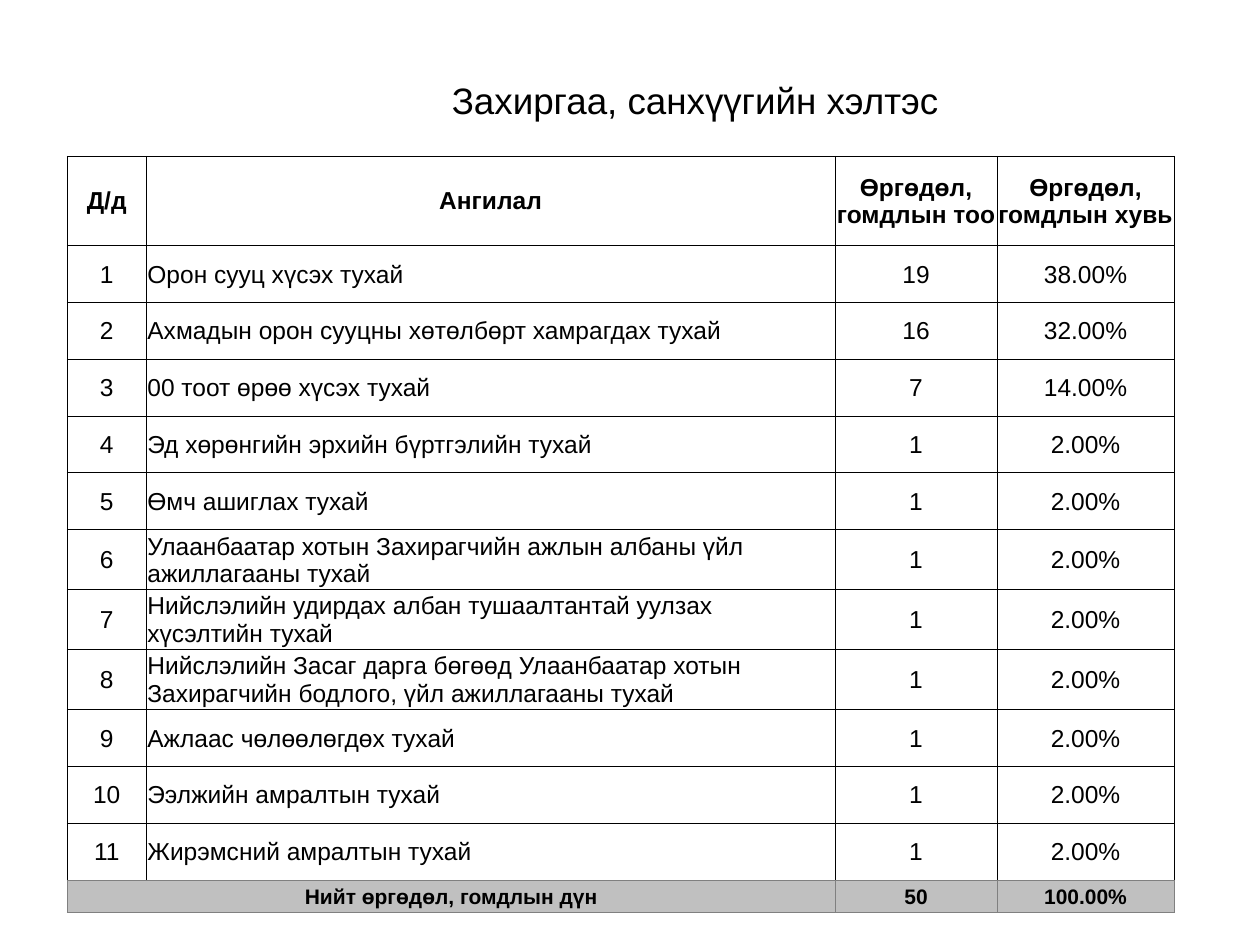
import dataclasses

import pptx
import pptx.dml.color
import pptx.enum.text
import pptx.oxml
import pptx.oxml.ns
import pptx.util

Pt = pptx.util.Pt
Align = pptx.enum.text.PP_ALIGN
Anchor = pptx.enum.text.MSO_ANCHOR


@dataclasses.dataclass(frozen=True)
class Theme:
    font: str = "Arial"
    ink: str = "000000"
    paper: str = "FFFFFF"
    grey: str = "C0C0C0"
    edge: str = "808080"
    title: float = 21
    body: float = 14
    total: float = 12
    line: float = 0.5


THEME = Theme()
COLS = [45, 393.75, 92.5, 101.25]
HEAD = ["Д/д", "Ангилал", "Өргөдөл, гомдлын тоо", "Өргөдөл, гомдлын хувь"]
ITEMS = [
    ("Орон сууц хүсэх тухай", 19),
    ("Ахмадын орон сууцны хөтөлбөрт хамрагдах тухай", 16),
    ("00 тоот өрөө хүсэх тухай", 7),
    ("Эд хөрөнгийн эрхийн бүртгэлийн тухай", 1),
    ("Өмч ашиглах тухай", 1),
    ("Улаанбаатар хотын Захирагчийн ажлын албаны үйл ажиллагааны тухай", 1),
    ("Нийслэлийн удирдах албан тушаалтантай уулзах хүсэлтийн тухай", 1),
    ("Нийслэлийн Засаг дарга бөгөөд Улаанбаатар хотын Захирагчийн бодлого, "
     "үйл ажиллагааны тухай", 1),
    ("Ажлаас чөлөөлөгдөх тухай", 1),
    ("Ээлжийн амралтын тухай", 1),
    ("Жирэмсний амралтын тухай", 1),
]
WRAP = 55


def color(code):
    return pptx.dml.color.RGBColor.from_string(code)


def write(frame, text, size=THEME.body, bold=False, align=Align.CENTER):
    para = frame.paragraphs[0]
    para.alignment = align
    run = para.add_run()
    run.text = text
    run.font.name = THEME.font
    run.font.size = Pt(size)
    run.font.bold = bold
    run.font.color.rgb = color(THEME.ink)


def border(cell, left, right, top, bottom):
    props = cell._tc.get_or_add_tcPr()
    sides = zip("LRTB", (left, right, top, bottom))
    for place, (side, code) in enumerate(sides):
        line = pptx.oxml.parse_xml(
            f'<a:ln{side} {pptx.oxml.ns.nsdecls("a")} w="{Pt(THEME.line)}">'
            f'<a:solidFill><a:srgbClr val="{code}"/></a:solidFill>'
            f'</a:ln{side}>')
        props.insert(place, line)


def paint(cell, fill, edges):
    cell.fill.solid()
    cell.fill.fore_color.rgb = color(fill)
    cell.vertical_anchor = Anchor.MIDDLE
    cell.margin_left = cell.margin_right = cell.margin_top = Pt(0.75)
    cell.margin_bottom = 0
    border(cell, *edges)


def add_title(slide, text):
    title = slide.shapes.title
    title.left, title.top = Pt(108.25), Pt(41)
    title.width, title.height = Pt(578), Pt(58)
    frame = title.text_frame
    frame.auto_size = pptx.enum.text.MSO_AUTO_SIZE.NONE
    frame.vertical_anchor = Anchor.TOP
    write(frame, text, size=THEME.title)


def add_grid(slide):
    total = sum(count for _, count in ITEMS)
    rows = [HEAD]
    for order, (name, count) in enumerate(ITEMS, 1):
        rows.append([str(order), name, str(count), f"{count / total:.2%}"])
    rows.append(["Нийт өргөдөл, гомдлын дүн", "", str(total), "100.00%"])
    body = [34.25 if len(name) > WRAP else 32.5 for name, _ in ITEMS]
    highs = [51] + body + [18.5]
    last = len(rows) - 1

    table = slide.shapes.add_table(
        len(rows), len(COLS), Pt(38.5), Pt(89.25),
        Pt(sum(COLS)), Pt(sum(highs))).table
    table.first_row = table.horz_banding = False
    for col, width in zip(table.columns, COLS):
        col.width = Pt(width)
    for row, high in zip(table.rows, highs):
        row.height = Pt(high)
    table.cell(last, 0).merge(table.cell(last, 1))

    for r, row in enumerate(rows):
        foot = r == last
        edge = THEME.edge if foot else THEME.ink
        base = THEME.edge if r >= last - 1 else THEME.ink
        for c, text in enumerate(row):
            cell = table.cell(r, c)
            paint(cell, THEME.grey if foot else THEME.paper,
                  (edge, edge, edge, base))
            if text:
                name = c == 1 and 0 < r < last
                write(cell.text_frame, text,
                      size=THEME.total if foot else THEME.body,
                      bold=r in (0, last),
                      align=Align.LEFT if name else Align.CENTER)


def main():
    deck = pptx.Presentation()
    deck.slide_width, deck.slide_height = Pt(720), Pt(540)
    slide = deck.slides.add_slide(deck.slide_layouts[5])
    add_title(slide, "Захиргаа, санхүүгийн хэлтэс")
    add_grid(slide)
    deck.save("out.pptx")


if __name__ == "__main__":
    main()
